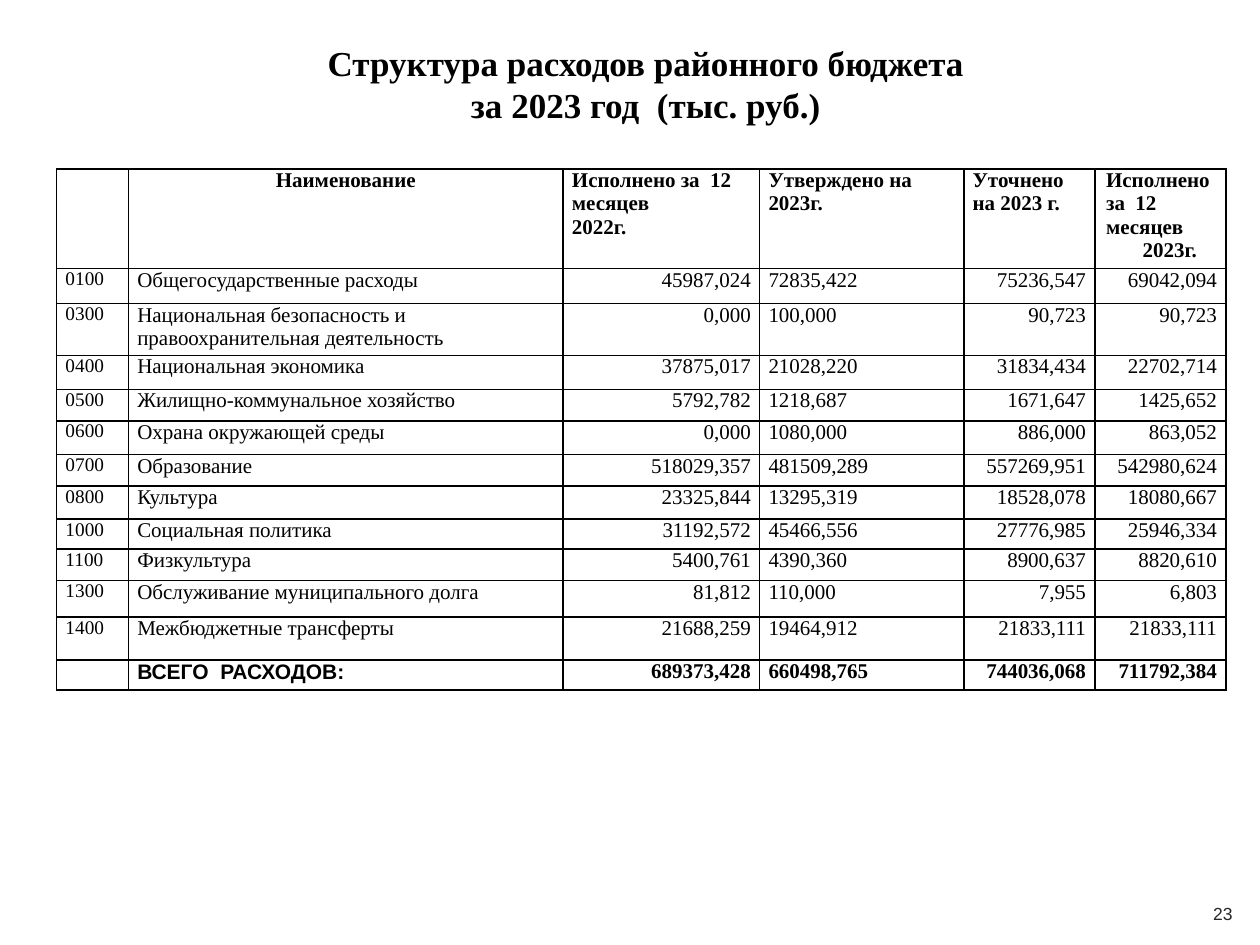
"""Build a slide with the table of district budget expenditure for 2023."""
import pptx
import pptx.dml.color
import pptx.enum.text
import pptx.oxml
import pptx.oxml.ns
import pptx.util

BLACK = pptx.dml.color.RGBColor(0x00, 0x00, 0x00)
GREY = pptx.dml.color.RGBColor(0x26, 0x26, 0x26)
SERIF, SANS = "Times New Roman", "Arial"
ALIGN = pptx.enum.text.PP_ALIGN
MIDDLE = pptx.enum.text.MSO_ANCHOR.MIDDLE
COLUMNS = [0.57, 3.45, 1.56, 1.62, 1.04, 1.04]
ROWS = [0.79, 0.28, 0.41, 0.27, 0.25, 0.27, 0.25, 0.26, 0.24, 0.25, 0.29, 0.34, 0.24]
HEADER = [
    "", "Наименование", "Исполнено за  12 месяцев\n2022г.", "Утверждено на 2023г.",
    "Уточнено на 2023 г.", "Исполнено за  12 месяцев\n2023г.",
]
EXPENSES = [
    ["0100", "Общегосударственные расходы", "45987,024", "72835,422", "75236,547", "69042,094"],
    ["0300", "Национальная безопасность и правоохранительная деятельность",
     "0,000", "100,000", "90,723", "90,723"],
    ["0400", "Национальная экономика", "37875,017", "21028,220", "31834,434", "22702,714"],
    ["0500", "Жилищно-коммунальное хозяйство", "5792,782", "1218,687", "1671,647", "1425,652"],
    ["0600", "Охрана окружающей среды", "0,000", "1080,000", "886,000", "863,052"],
    ["0700", "Образование", "518029,357", "481509,289", "557269,951", "542980,624"],
    ["0800", "Культура", "23325,844", "13295,319", "18528,078", "18080,667"],
    ["1000", "Социальная политика", "31192,572", "45466,556", "27776,985", "25946,334"],
    ["1100", "Физкультура", "5400,761", "4390,360", "8900,637", "8820,610"],
    ["1300", "Обслуживание муниципального долга", "81,812", "110,000", "7,955", "6,803"],
    ["1400", "Межбюджетные трансферты", "21688,259", "19464,912", "21833,111", "21833,111"],
]
TOTAL = ["", "ВСЕГО  РАСХОДОВ:", "689373,428", "660498,765", "744036,068", "711792,384"]


def write(frame, text, size=12, font=SERIF, color=BLACK, bold=False, align=ALIGN.LEFT, indents=(0, 0)):
    """Fill a text frame with one paragraph per line of text."""
    for number, line in enumerate(text.split("\n")):
        para = frame.paragraphs[0] if number == 0 else frame.add_paragraph()
        para.alignment = align
        if indents[number]:
            para._p.get_or_add_pPr().set("marL", str(pptx.util.Inches(indents[number])))
        if not line:
            para._p.get_or_add_endParaRPr().set("sz", str(size * 100))
            continue
        span = para.add_run()
        span.text = line
        span.font.size = pptx.util.Pt(size)
        span.font.name = font
        span.font.bold = bold
        span.font.color.rgb = color


def outline(cell):
    """Draw a black one-point border on every side of a cell."""
    for side in ("lnL", "lnR", "lnT", "lnB"):
        cell._tc.get_or_add_tcPr().append(pptx.oxml.parse_xml(
            f'<a:{side} {pptx.oxml.ns.nsdecls("a")} w="12700"><a:solidFill>'
            f'<a:srgbClr val="{BLACK}"/></a:solidFill></a:{side}>'))


deck = pptx.Presentation()
deck.slide_width, deck.slide_height = pptx.util.Inches(10), pptx.util.Inches(7.5)
page = deck.slides.add_slide(deck.slide_layouts[5])

title = page.shapes.title
title.left, title.top = pptx.util.Inches(0.5), pptx.util.Inches(0.18)
title.width, title.height = pptx.util.Inches(9.25), pptx.util.Inches(0.97)
title.text_frame.vertical_anchor = MIDDLE
write(title.text_frame, "Структура расходов районного бюджета\nза 2023 год  (тыс. руб.)",
      size=20, bold=True, align=ALIGN.CENTER)

table = page.shapes.add_table(
    len(ROWS), len(COLUMNS), pptx.util.Inches(0.45), pptx.util.Inches(1.34),
    pptx.util.Inches(sum(COLUMNS)), pptx.util.Inches(sum(ROWS))).table
table.first_row = table.horz_banding = False
for column, width in zip(table.columns, COLUMNS):
    column.width = pptx.util.Inches(width)
for row, height in zip(table.rows, ROWS):
    row.height = pptx.util.Inches(height)

last = len(ROWS) - 1
for r, values in enumerate([HEADER, *EXPENSES, TOTAL]):
    for c, value in enumerate(values):
        cell = table.cell(r, c)
        cell.margin_left = cell.margin_right = pptx.util.Inches(0.07)
        cell.margin_top = cell.margin_bottom = 0
        outline(cell)
        cell.fill.background()
        align = ALIGN.LEFT
        if r == 0 and c == 1:
            align = ALIGN.CENTER
        elif r > 0 and c in (2, 4, 5):
            align = ALIGN.RIGHT
        write(cell.text_frame, value, size=11 if c == 0 else 12,
              font=SANS if (r, c) == (last, 1) else SERIF,
              bold=r in (0, last), align=align,
              indents=(0.02, 0.31) if (r, c) == (0, 5) else (0, 0))

box = page.shapes.add_textbox(pptx.util.Inches(9.45), pptx.util.Inches(7.05),
                              pptx.util.Inches(0.51), pptx.util.Inches(0.4))
box.text_frame.word_wrap = True
box.text_frame.vertical_anchor = MIDDLE
write(box.text_frame, "23", size=10, font=SANS, color=GREY, align=ALIGN.CENTER)

deck.save("out.pptx")
